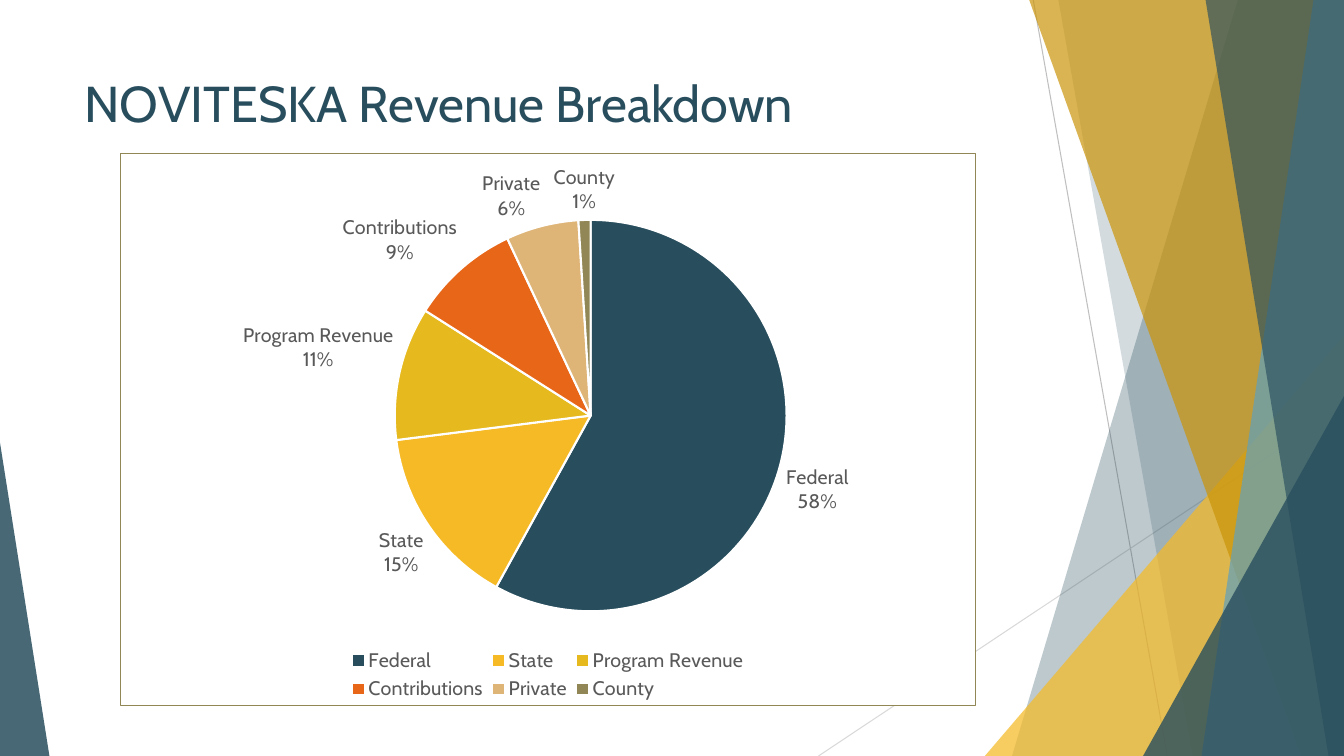
from collections import namedtuple
from lxml import etree
from pptx import Presentation
from pptx import util as u
from pptx.chart.data import CategoryChartData
from pptx.dml.color import RGBColor
from pptx.enum import chart as ch, shapes, text
from pptx.oxml import ns, parse_xml

Box = namedtuple("Box", "x y w h")

THEME = {
    "font": "Cabin",
    "navy": "284E5E", "gold": "F5BA26", "bronze": "CB9409", "sky": "61A1BC",
    "white": "FFFFFF", "olive": "918655", "label": "595959",
    "slices": ["284E5E", "F5BA26", "E6B91E", "E76618", "DEB477", "918655"],
    "title_size": 36, "label_size": 14, "base_size": 10,
}

REVENUE = {"Federal": 58, "State": 15, "Program Revenue": 11,
           "Contributions": 9, "Private": 6, "County": 1}

RAYS = [((76.88, 0), (86.85, 100), "BFBFBF"),
        ((100, 53.73), (60.9, 100), "D9D9D9")]

FACETS = [
    ("band", (92.1, 75.3), "navy", 30),
    ("band", (78.75, 88.73), "navy", 20),
    ("triangle", (73.28, 44.4, 26.72, 55.6, 1), "gold", 72),
    ("band", (76.58, 96.83), "bronze", 70),
    ("band", (97.73, 89.4), "sky", 70),
    ("band", (89.7, 98.85), "navy", 65),
    ("triangle", (85.05, 52.4, 14.95, 47.6, 1), "navy", 80),
    ("triangle", (0, 58.53, 3.68, 41.47, 0), "navy", 85),
]


def rgb(value):
    return RGBColor.from_string(value)


def point(box, x, y):
    return int(box.x + box.w * x / 100), int(box.y + box.h * y / 100)


def part(box, x, y, w, h):
    return Box(*point(box, x, y), int(box.w * w / 100), int(box.h * h / 100))


def apply(target, **formats):
    for name, value in formats.items():
        setattr(target, name, value)


def style_font(font, size, color):
    apply(font, name=THEME["font"], size=u.Pt(size), bold=False)
    font.color.rgb = rgb(color)


def add_ray(s, box, start, end, color):
    ray = s.shapes.add_connector(shapes.MSO_CONNECTOR.STRAIGHT,
                                 *point(box, *start), *point(box, *end))
    ray.line.color.rgb = rgb(color)
    ray.line.width = u.Pt(0.75)
    etree.SubElement(ray._element.spPr, ns.qn("a:effectLst"))


def add_band(s, box, top, bottom):
    corners = [(100, 0), (100, 100), (bottom, 100)]
    outline = s.shapes.build_freeform(*point(box, top, 0))
    outline.add_line_segments([point(box, *c) for c in corners], close=True)
    return outline.convert_to_shape()


def add_triangle(s, box, x, y, w, h, apex):
    sp = s.shapes.add_shape(shapes.MSO_SHAPE.ISOSCELES_TRIANGLE, *part(box, x, y, w, h))
    sp.adjustments[0] = apex
    return sp


def add_backdrop(s, box):
    for ray in RAYS:
        add_ray(s, box, *ray)
    builders = {"band": add_band, "triangle": add_triangle}
    for kind, geometry, color, opacity in FACETS:
        sp = builders[kind](s, box, *geometry)
        sp.shadow.inherit = False
        sp.line.fill.background()
        sp.fill.solid()
        sp.fill.fore_color.rgb = rgb(THEME[color])
        tint = sp._element.spPr.find(".//" + ns.qn("a:srgbClr"))
        etree.SubElement(tint, ns.qn("a:alpha"), val=str(opacity * 1000))


def add_title(s, box, wording):
    tf = s.shapes.add_textbox(*box).text_frame
    apply(tf, word_wrap=True, vertical_anchor=text.MSO_ANCHOR.TOP)
    r = tf.paragraphs[0].add_run()
    r.text = wording
    style_font(r.font, THEME["title_size"], THEME["navy"])


def set_layout(element, x, y, w, h, inner=False):
    target = '<c:layoutTarget val="inner"/>' if inner else ""
    sizes = "".join(f'<c:{k} val="{v}"/>' for k, v in zip("xywh", (x, y, w, h)))
    layout = parse_xml(
        f'<c:layout {ns.nsdecls("c")}><c:manualLayout>{target}'
        f'<c:xMode val="edge"/><c:yMode val="edge"/>{sizes}</c:manualLayout></c:layout>')
    for old in element.findall(ns.qn("c:layout")):
        element.remove(old)
    if inner:
        element.insert(0, layout)
    else:
        element.find(ns.qn("c:legendPos")).addnext(layout)


def frame_chart(chart):
    frame = parse_xml(
        f'<c:spPr {ns.nsdecls("c", "a")}>'
        f'<a:solidFill><a:srgbClr val="{THEME["white"]}"/></a:solidFill>'
        f'<a:ln w="9525"><a:solidFill><a:srgbClr val="{THEME["olive"]}"/>'
        '</a:solidFill></a:ln></c:spPr>')
    chart._chartSpace.find(ns.qn("c:chart")).addnext(frame)


def add_revenue_pie(s, box, revenue):
    data = CategoryChartData()
    data.categories = list(revenue)
    data.add_series("Series 1", list(revenue.values()))
    chart = s.shapes.add_chart(ch.XL_CHART_TYPE.PIE, *box, data).chart
    style_font(chart.font, THEME["base_size"], "000000")
    apply(chart, has_title=False, has_legend=True)
    frame_chart(chart)

    apply(chart.legend, position=ch.XL_LEGEND_POSITION.BOTTOM, include_in_layout=False)
    style_font(chart.legend.font, THEME["label_size"], THEME["label"])
    set_layout(chart.legend._element, 0.26, 0.89, 0.48, 0.11)

    plot = chart.plots[0]
    apply(plot, vary_by_categories=True, has_data_labels=True)
    set_layout(chart._chartSpace.chart.plotArea, 0.32, 0.12, 0.46, 0.71, inner=True)
    for i, color in enumerate(THEME["slices"]):
        fmt = plot.series[0].points[i].format
        fmt.fill.solid()
        fmt.fill.fore_color.rgb = rgb(color)
        fmt.line.color.rgb = rgb(THEME["white"])
        fmt.line.width = u.Pt(1.5)

    labels = plot.data_labels
    apply(labels, show_category_name=True, show_percentage=True, show_value=False,
          number_format="0%", number_format_is_linked=False,
          position=ch.XL_LABEL_POSITION.OUTSIDE_END)
    style_font(labels.font, THEME["label_size"], THEME["label"])
    separator = parse_xml(f'<c:separator {ns.nsdecls("c")}>\n</c:separator>')
    labels._element.find(ns.qn("c:showBubbleSize")).addnext(separator)


def main():
    prs = Presentation()
    apply(prs, slide_width=u.Inches(13.33), slide_height=u.Inches(7.5))
    s = prs.slides.add_slide(prs.slide_layouts[6])
    page = Box(0, 0, prs.slide_width, prs.slide_height)
    add_backdrop(s, page)
    add_title(s, part(page, 5.55, 8.93, 70.5, 19.2), "NOVITESKA Revenue Breakdown")
    add_revenue_pie(s, part(page, 8.93, 20.27, 63.68, 73.07), REVENUE)
    prs.save("out.pptx")


if __name__ == "__main__":
    main()
